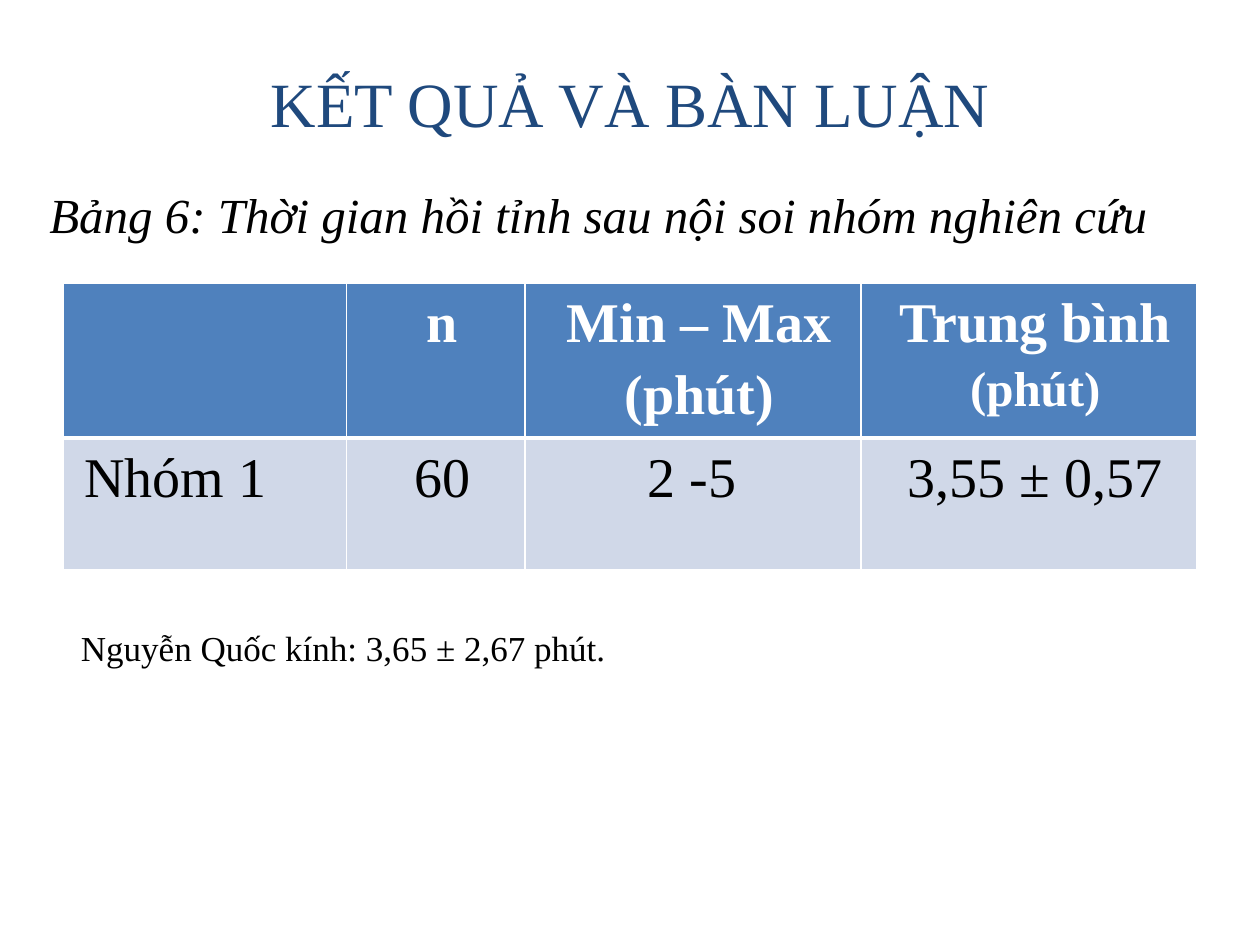
from lxml.etree import SubElement as Sub
from pptx import Presentation
from pptx.dml.color import RGBColor as Rgb
from pptx.enum.text import MSO_ANCHOR as Anchor, PP_ALIGN as Align
from pptx.oxml.ns import qn
from pptx.util import Pt

FONT = "Times New Roman"
INK = {"title": "1F497D", "text": "000000", "head": "4F81BD",
       "body": "D0D8E8", "line": "FFFFFF"}
COLS = [162, 102, 192, 192]
HEAD = [[], [("n", 32)], [("Min – Max", 32), ("(phút)", 32)],
        [("Trung bình", 32), ("(phút)", 28)]]
BODY = [[("Nhóm 1", 32)], [("60", 32)], [("2 -5 ", 32)], [("3,55 ± 0,57", 32)]]


def add_run(para, text, size, color, bold=False, italic=False):
    run = para.add_run()
    run.text = text
    font = run.font
    font.name, font.size = FONT, Pt(size)
    font.bold, font.italic = bold, italic
    font.color.rgb = Rgb.from_string(INK[color])


def add_text(slide, box, text, size, color="text", align=Align.LEFT,
             inset=7.2, italic=False):
    frame = slide.shapes.add_textbox(*map(Pt, box)).text_frame
    frame.word_wrap = True
    frame.vertical_anchor = Anchor.MIDDLE
    frame.margin_left = Pt(inset)
    para = frame.paragraphs[0]
    para.alignment = align
    add_run(para, text, size, color, italic=italic)


def add_edges(cell, base):
    props = cell._tc.get_or_add_tcPr()
    for side, width in (("L", 1), ("R", 1), ("T", 1), ("B", base)):
        line = Sub(props, qn(f"a:ln{side}"), w=str(Pt(width)))
        fill = Sub(line, qn("a:solidFill"))
        Sub(fill, qn("a:srgbClr"), val=INK["line"])


def fill_cell(cell, lines, fill, color, bold, align):
    cell.margin_left, cell.margin_right = Pt(12.24), Pt(5.04)
    cell.margin_top = cell.margin_bottom = 0
    add_edges(cell, 3 if bold else 1)
    cell.fill.solid()
    cell.fill.fore_color.rgb = Rgb.from_string(INK[fill])
    frame = cell.text_frame
    for i, (text, size) in enumerate(lines):
        para = frame.add_paragraph() if i else frame.paragraphs[0]
        para.alignment, para.line_spacing = align, 1.15
        add_run(para, text, size, color, bold)


def add_grid(slide, box):
    table = slide.shapes.add_table(2, len(COLS), *map(Pt, box)).table
    for col, width in zip(table.columns, COLS):
        col.width = Pt(width)
    for c, lines in enumerate(HEAD):
        fill_cell(table.cell(0, c), lines, "head", "line", True, Align.CENTER)
    for c, lines in enumerate(BODY):
        align = Align.CENTER if c else Align.JUSTIFY
        fill_cell(table.cell(1, c), lines, "body", "text", False, align)


def main():
    deck = Presentation()
    deck.slide_width, deck.slide_height = Pt(720), Pt(540)
    slide = deck.slides.add_slide(deck.slide_layouts[6])
    add_text(slide, (36, 21.6, 648, 74), "KẾT QUẢ VÀ BÀN LUẬN", 36,
             "title", Align.CENTER)
    add_grid(slide, (36, 162, 648, 150))
    add_text(slide, (0, 102, 677, 41),
             "Bảng 6: Thời gian hồi tỉnh sau nội soi nhóm nghiên cứu", 28,
             inset=28.2, italic=True)
    add_text(slide, (24, 354, 666, 32),
             "Nguyễn Quốc kính: 3,65 ± 2,67 phút.", 20, inset=22.2)
    deck.save("out.pptx")


if __name__ == "__main__":
    main()
